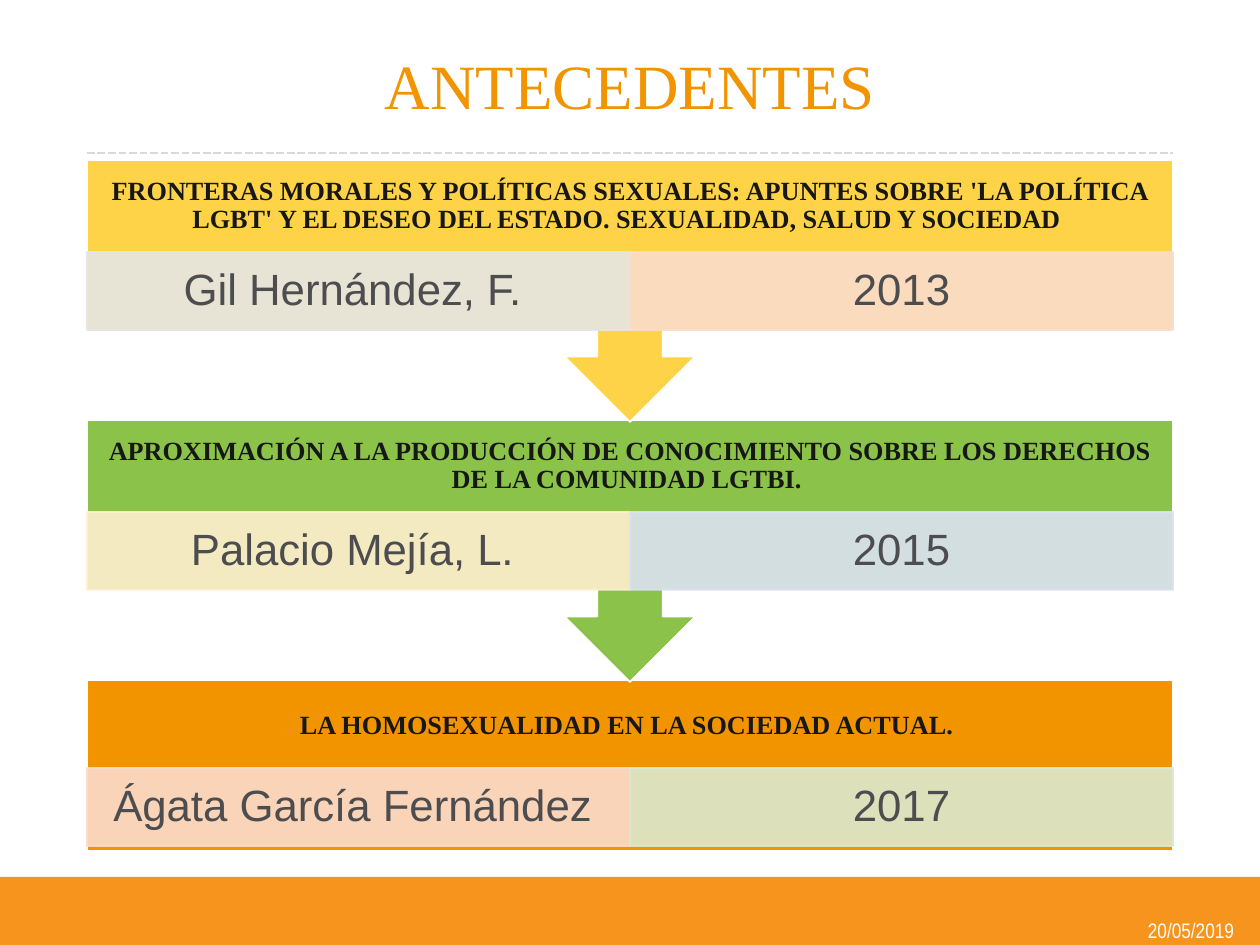
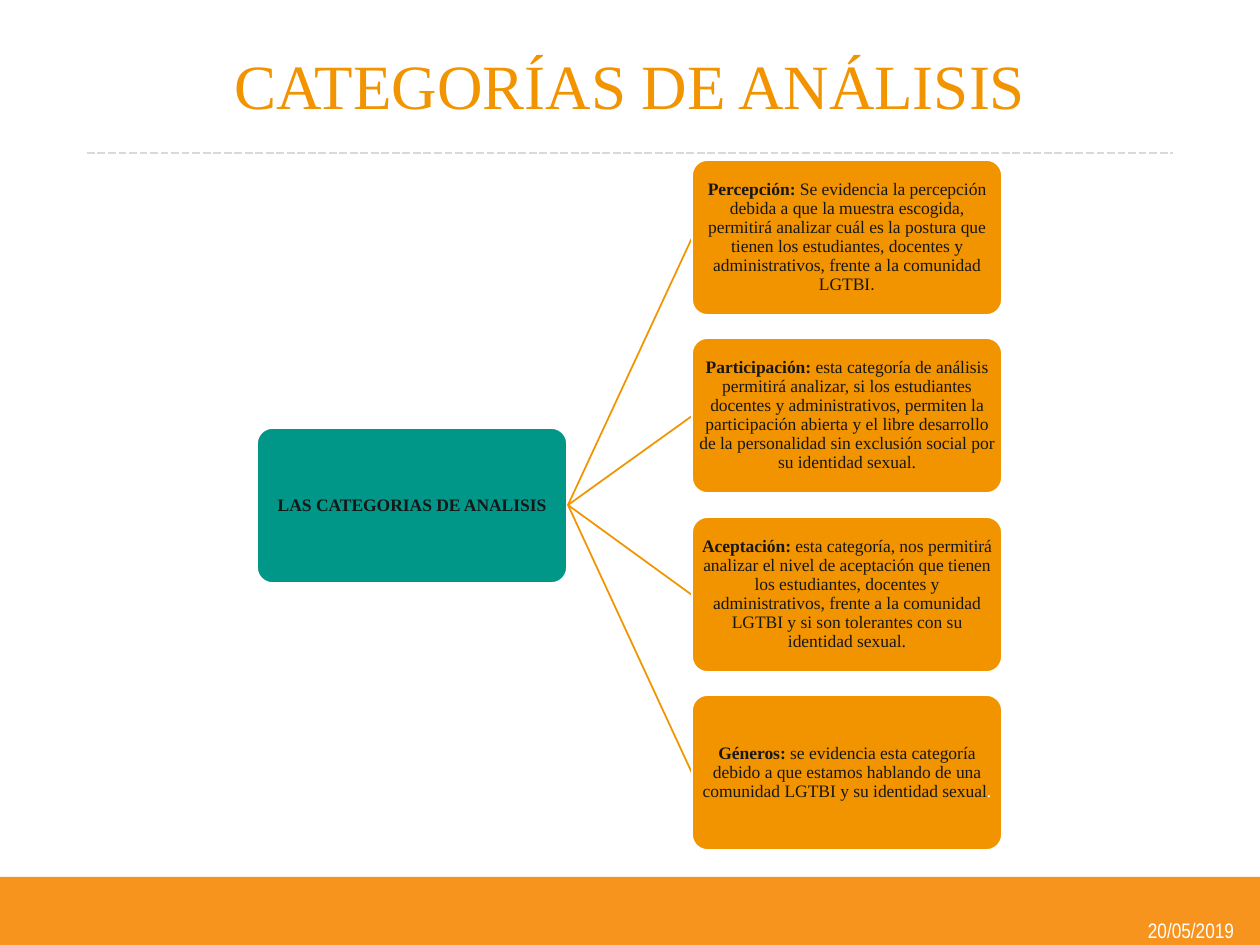
from dataclasses import dataclass
from lxml.etree import SubElement
from pptx import Presentation
from pptx.dml.color import RGBColor
from pptx.enum.dml import MSO_LINE
from pptx.enum.shapes import MSO_CONNECTOR, MSO_SHAPE
from pptx.enum.text import MSO_ANCHOR, MSO_AUTO_SIZE, PP_ALIGN
from pptx.oxml.ns import qn
from pptx.util import Pt

RECT = MSO_SHAPE.RECTANGLE
ROUND = MSO_SHAPE.ROUNDED_RECTANGLE
ARROW = MSO_SHAPE.DOWN_ARROW_CALLOUT
STRAIGHT = MSO_CONNECTOR.STRAIGHT
DASH = MSO_LINE.SQUARE_DOT
MIDDLE = MSO_ANCHOR.MIDDLE
CENTER = PP_ALIGN.CENTER
NO_FIT = MSO_AUTO_SIZE.NONE

PX = 914400 / 126
WIDE, HIGH = 1260, 945
LEFT, SPAN, TOP = 87, 1086, 160


@dataclass(frozen=True)
class Theme:
    serif: str = "Times New Roman"
    sans: str = "Arial"
    narrow: str = "Arial Narrow"
    white: str = "FFFFFF"
    band: str = "F7941D"
    rule: str = "D9D9D9"
    orange: str = "F29400"
    green: str = "8BC34A"
    yellow: str = "FFD347"
    teal: str = "009688"
    dark: str = "181717"
    gray: str = "4D4D4F"
    silver: str = "E5E5E5"
    peach: str = "FADCCC"
    cream: str = "FFEFCF"
    sky: str = "DBE2F1"
    mint: str = "DAE9D0"
    title: int = 36
    cell: int = 25
    head: int = 15
    date: int = 12
    note: int = 10


def px(*sizes):
    return [round(size * PX) for size in sizes]


class Deck:
    def __init__(self, theme):
        self.theme = theme
        self.show = Presentation()
        self.show.slide_width, self.show.slide_height = px(WIDE, HIGH)
        self.slide = None

    def page(self, title):
        t = self.theme
        self.slide = self.show.slides.add_slide(self.show.slide_layouts[5])
        self.shape(RECT, (0, 877, WIDE, 68), t.band)
        self.label((1124, 917, 134, 27), "20/05/2019", t.narrow, t.date, t.white)
        self.line((LEFT, 153), (LEFT + SPAN, 153), t.rule, 1.5, DASH)
        head = self.slide.shapes.title
        head.left, head.top, head.width, head.height = px(LEFT, 16, SPAN, 136)
        self.text(head, title, t.serif, t.title, t.orange)

    def shape(self, kind, box, fill, edge=None, alpha=None):
        item = self.slide.shapes.add_shape(kind, *px(*box))
        item.shadow.inherit = False
        item.fill.solid()
        item.fill.fore_color.rgb = RGBColor.from_string(fill)
        if edge:
            item.line.color.rgb = RGBColor.from_string(edge)
            item.line.width = Pt(1)
        else:
            item.line.fill.background()
        if alpha:
            for tint in item.element.spPr.iter(qn("a:srgbClr")):
                SubElement(tint, qn("a:alpha"), val=str(alpha * 1000))
        return item

    def line(self, start, end, color, width=1.0, dash=None):
        item = self.slide.shapes.add_connector(STRAIGHT, *px(*start, *end))
        item.line.color.rgb = RGBColor.from_string(color)
        item.line.width = Pt(width)
        if dash:
            item.line.dash_style = dash
        SubElement(item.element.spPr, qn("a:effectLst"))

    def label(self, box, words, *style, **more):
        item = self.slide.shapes.add_textbox(*px(*box))
        self.text(item, words, *style, **more)

    def text(self, item, words, face, size, color, bold=None, pad=(0, 0), space=None):
        frame = item.text_frame
        frame.word_wrap = True
        frame.auto_size = NO_FIT
        frame.vertical_anchor = MIDDLE
        frame.margin_left = frame.margin_right = px(pad[0])[0]
        frame.margin_top = frame.margin_bottom = px(pad[1])[0]
        para = frame.paragraphs[0]
        para.alignment = CENTER
        para.line_spacing = space
        font = para.font
        font.name, font.size, font.bold = face, Pt(size), bold
        font.color.rgb = RGBColor.from_string(color)
        for part in [(words, {})] if isinstance(words, str) else words:
            run = para.add_run()
            run.text, look = part
            if "bold" in look:
                run.font.bold = look["bold"]
            if "face" in look:
                run.font.name = look["face"]
            if "color" in look:
                run.font.color.rgb = RGBColor.from_string(look["color"])

    def cell(self, box, words, fill):
        t = self.theme
        item = self.shape(RECT, box, fill, fill, 90)
        self.text(item, words, t.sans, t.cell, t.gray, pad=(24, 4), space=0.9)

    def step(self, top, words, fill, cells, last):
        t = self.theme
        kind, high, drop = (RECT, 171, 88) if last else (ARROW, 262, 92)
        self.shape(kind, (LEFT, top, SPAN, high), fill, t.white)
        self.label((LEFT, top, SPAN, 92), words, t.serif, t.head, t.dark,
                   bold=True, pad=(15, 15), space=0.9)
        half = SPAN // 2
        for i, (name, tint) in enumerate(cells):
            self.cell((LEFT + i * half, top + drop, half, 78), name, tint)

    def card(self, left, top, words, fill, bold=None):
        t = self.theme
        item = self.shape(ROUND, (left, top, 310, 155), fill, t.white)
        item.adjustments[0] = 0.1
        self.text(item, words, t.serif, t.note, t.dark, bold, (1, 1), 0.9)


def main():
    t = Theme()
    deck = Deck(t)

    deck.page("ANTECEDENTES")
    steps = [
        ("FRONTERAS MORALES Y POLÍTICAS SEXUALES: APUNTES SOBRE 'LA POLÍTICA LGBT' "
         "Y EL DESEO DEL ESTADO. SEXUALIDAD, SALUD Y SOCIEDAD ", t.yellow,
         [("Gil Hernández, F. ", t.silver), ("2013", t.peach)]),
        ("APROXIMACIÓN A LA PRODUCCIÓN DE CONOCIMIENTO SOBRE LOS DERECHOS "
         "DE LA COMUNIDAD LGTBI. ", t.green,
         [("Palacio Mejía, L. ", t.cream), ("2015", t.sky)]),
        ("LA HOMOSEXUALIDAD EN LA SOCIEDAD ACTUAL. ", t.orange,
         [("Ágata García Fernández ", t.peach), ("2017", t.mint)]),
    ]
    for i, (words, fill, cells) in reversed(list(enumerate(steps))):
        deck.step(TOP + i * 260, words, fill, cells, i == len(steps) - 1)

    deck.page("CATEGORÍAS DE ANÁLISIS")
    deck.card(257, 428, "LAS CATEGORIAS DE ANALISIS", t.teal, True)
    cards = [
        ("Percepción: ",
         "Se evidencia la percepción debida a que la muestra escogida, permitirá "
         "analizar cuál es la postura que tienen los estudiantes, docentes y "
         "administrativos, frente a la comunidad LGTBI", (".", {"face": t.sans})),
        ("Participación: ",
         "esta categoría de análisis permitirá analizar, si los estudiantes docentes y "
         "administrativos, permiten la participación abierta y el libre desarrollo de la "
         "personalidad sin exclusión social por su identidad sexual."),
        ("Aceptación: ",
         "esta categoría, nos permitirá analizar el nivel de aceptación que tienen los "
         "estudiantes, docentes y administrativos, frente a la comunidad LGTBI y si son "
         "tolerantes con su identidad sexual."),
        ("Géneros: ",
         "se evidencia esta categoría debido a que estamos hablando de una comunidad "
         "LGTBI y su identidad sexual", (".", {"color": t.white})),
    ]
    for i, (name, words, *stop) in enumerate(cards):
        top = TOP + i * 357 // 2
        deck.line((568, 505), (692, top + 78), t.orange)
        deck.card(692, top, [(name, {"bold": True}), (words, {}), *stop], t.orange)

    deck.show.save("out.pptx")


if __name__ == "__main__":
    main()
